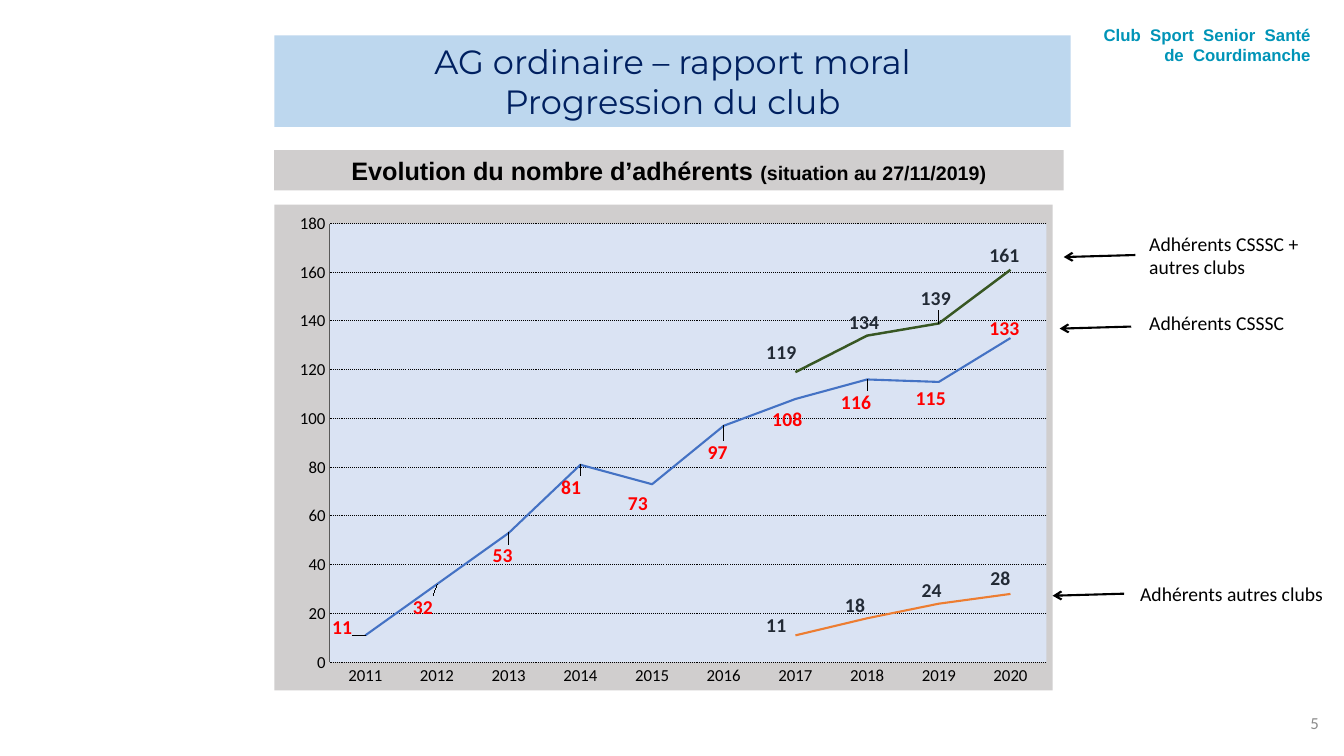
from dataclasses import dataclass

from lxml.etree import SubElement
from pptx import Presentation
from pptx.chart.data import CategoryChartData as ChartData
from pptx.dml.color import RGBColor as Rgb
from pptx.enum.chart import XL_CHART_TYPE as Kind, XL_LABEL_POSITION as Spot
from pptx.enum.chart import XL_TICK_MARK as Tick
from pptx.enum.dml import MSO_LINE as Dash
from pptx.enum.shapes import MSO_CONNECTOR as Link, MSO_SHAPE as Form
from pptx.enum.text import MSO_ANCHOR as Anchor, MSO_AUTO_SIZE as Fit
from pptx.enum.text import PP_ALIGN as Align
from pptx.oxml import parse_xml
from pptx.oxml.ns import nsdecls, qn
from pptx.util import Inches, Pt


@dataclass(frozen=True)
class Theme:
    body: str = "Calibri"
    head: str = "Montserrat"
    sans: str = "Arial"
    black: str = "000000"
    navy: str = "002060"
    teal: str = "0094B7"
    sky: str = "BDD7EE"
    pale: str = "DAE3F3"
    grey: str = "D0CECE"
    dim: str = "8C8C8C"
    axis: str = "595959"
    red: str = "FF0000"
    slate: str = "222A35"
    blue: str = "4472C4"
    orange: str = "ED7D31"
    green: str = "385723"
    title: int = 24
    sub: int = 18
    note: int = 14
    small: int = 12


@dataclass(frozen=True)
class Box:
    x: float
    y: float
    w: float
    h: float

    def place(self) -> tuple:
        return tuple(Inches(v) for v in (self.x, self.y, self.w, self.h))


@dataclass(frozen=True)
class Callout:
    text: str
    box: Box
    tip: tuple  # arrowhead position


@dataclass(frozen=True)
class Trend:
    name: str
    vals: tuple
    line: str
    width: float
    ink: str
    shifts: tuple  # label offsets from the points, in inches


T = Theme()
YEARS = [str(y) for y in range(2011, 2021)]
CHART = Box(2.72, 2.03, 7.72, 4.82)
PLOT = {"x": 0.071, "y": 0.039, "w": 0.921, "h": 0.903}

CALLOUTS = (
    Callout("Adhérents CSSSC + autres clubs", Box(11.3, 2.25, 1.94, 0.57), (10.55, 2.55)),
    Callout("Adhérents CSSSC", Box(11.3, 3.04, 1.94, 0.34), (10.51, 3.26)),
    Callout("Adhérents autres clubs", Box(11.21, 5.72, 2.13, 0.34), (10.44, 5.91)),
)
TRENDS = (
    Trend("Adhérents CSSSC", (11, 32, 53, 81, 73, 97, 108, 116, 115, 133),
          T.blue, 1.5, T.red,
          ((-.23, -.08), (-.14, .23), (-.06, .23), (-.09, .23), (-.14, .19),
           (-.06, .27), (-.08, .21), (-.11, .23), (-.08, .17), (-.06, -.09))),
    Trend("Adhérents autres clubs", (11, 18, 24, 28), T.orange, 1.5, T.slate,
          ((-.19, -.10), (-.12, -.13), (-.07, -.13), (-.10, -.15))),
    Trend("Adhérents CSSSC + autres clubs", (119, 134, 139, 161), T.green, 1.75, T.slate,
          ((-.14, -.19), (-.03, -.13), (-.03, -.25), (-.06, -.14))),
)


def style(font, size: float, name: str, color: str, bold: bool = False) -> None:
    font.size, font.name, font.bold = Pt(size), name, bold
    font.color.rgb = Rgb.from_string(color)


def paint(shape, color: str) -> None:
    shape.fill.solid()
    shape.fill.fore_color.rgb = Rgb.from_string(color)


def write(shape, lines: tuple, size: float, name: str, color: str,
          align=Align.LEFT, bold: bool = False, anchor=Anchor.TOP) -> None:
    frame = shape.text_frame
    frame.word_wrap, frame.auto_size = True, Fit.NONE
    frame.vertical_anchor = anchor
    frame.text = "\n".join(lines)
    for para in frame.paragraphs:
        para.alignment = align
        style(para.font, size, name, color, bold)


def add_note(slide, item: Callout) -> None:
    box = item.box
    write(slide.shapes.add_textbox(*box.place()), (item.text,), T.note, T.body, T.black)
    x, y = item.tip
    arrow = slide.shapes.add_connector(
        Link.STRAIGHT, Inches(x + 0.71), Inches(y - 0.02), Inches(x), Inches(y))
    arrow.line.width = Pt(1.5)
    arrow.line.color.rgb = Rgb.from_string(T.black)
    SubElement(arrow.line._get_or_add_ln(), qn("a:tailEnd"), type="arrow")
    SubElement(arrow._element.spPr, qn("a:effectLst"))


def layout(vals: dict, inner: bool = False):
    tags = '<c:layoutTarget val="inner"/>' if inner else ""
    if inner:
        tags += '<c:xMode val="edge"/><c:yMode val="edge"/>'
    tags += "".join(f'<c:{k} val="{v}"/>' for k, v in vals.items())
    return parse_xml(f'<c:layout {nsdecls("c")}><c:manualLayout>{tags}'
                     '</c:manualLayout></c:layout>')


def area(color: str):
    return parse_xml(f'<c:spPr {nsdecls("c", "a")}><a:solidFill><a:srgbClr val="{color}"/>'
                     '</a:solidFill><a:ln><a:noFill/></a:ln></c:spPr>')


def draw_trend(series, trend: Trend) -> None:
    series.smooth = False
    series.format.line.width = Pt(trend.width)
    series.format.line.color.rgb = Rgb.from_string(trend.line)
    start = len(YEARS) - len(trend.vals)
    for i, (dx, dy) in enumerate(trend.shifts, start):
        label = series.points[i].data_label
        style(label.font, T.note, T.body, trend.ink, True)
        label.position = Spot.CENTER
    for item, (dx, dy) in zip(series._element.iter(qn("c:dLbl")), trend.shifts):
        shift = {"x": round(dx / CHART.w, 4), "y": round(dy / CHART.h, 4)}
        item.insert(1, layout(shift))


def add_graph(slide) -> None:
    data = ChartData()
    data.categories = YEARS
    for trend in TRENDS:
        gap = [None] * (len(YEARS) - len(trend.vals))
        data.add_series(trend.name, gap + list(trend.vals))
    chart = slide.shapes.add_chart(Kind.LINE, *CHART.place(), data).chart
    chart.has_legend = chart.has_title = False
    style(chart.font, 10, T.body, T.black)
    for series, trend in zip(chart.plots[0].series, TRENDS):
        draw_trend(series, trend)

    # Axes and grid
    years, count = chart.category_axis, chart.value_axis
    for axis in (years, count):
        axis.major_tick_mark = axis.minor_tick_mark = Tick.NONE
        style(axis.tick_labels.font, T.small, T.body, T.black)
    years.format.line.fill.background()
    count.minimum_scale, count.maximum_scale, count.major_unit = 0, 180, 20
    count.format.line.color.rgb = Rgb.from_string(T.axis)
    count.format.line.width = Pt(0.75)
    grid = count.major_gridlines.format.line
    grid.color.rgb = Rgb.from_string(T.black)
    grid.width, grid.dash_style = Pt(0.75), Dash.ROUND_DOT

    # Plot position and backgrounds
    root = chart._chartSpace.find(qn("c:chart"))
    plot = root.find(qn("c:plotArea"))
    for old in plot.findall(qn("c:layout")):
        plot.remove(old)
    plot.insert(0, layout(PLOT, True))
    plot.append(area(T.pale))
    root.addnext(area(T.grey))


def main() -> None:
    deck = Presentation()
    deck.slide_width, deck.slide_height = Inches(13.33), Inches(7.5)
    slide = deck.slides.add_slide(deck.slide_layouts[5])
    shapes = slide.shapes

    # Title and club name
    title = shapes.title
    title.left, title.top, title.width, title.height = Box(2.72, 0.35, 7.9, 0.91).place()
    paint(title, T.sky)
    write(title, ("AG ordinaire – rapport moral", "Progression du club"),
          T.title, T.head, T.navy, Align.CENTER, anchor=Anchor.MIDDLE)
    club = shapes.add_textbox(*Box(10.75, 0.14, 2.44, 0.61).place())
    write(club, ("Club  Sport  Senior  Santé", "de  Courdimanche"),
          T.small, T.sans, T.teal, Align.RIGHT, True, Anchor.MIDDLE)
    club.text_frame.paragraphs[0]._p.get_or_add_pPr().set("marR", str(Inches(0.09)))

    # Chart heading
    band = shapes.add_shape(Form.RECTANGLE, *Box(2.72, 1.49, 7.83, 0.4).place())
    band.shadow.inherit = False
    paint(band, T.grey)
    band.line.fill.background()
    write(band, ("Evolution du nombre d’adhérents ",), T.sub, T.sans, T.black,
          Align.CENTER, True)
    date = band.text_frame.paragraphs[0].add_run()
    date.text, date.font.size = "(situation au 27/11/2019)", Pt(T.note)

    # Chart, callouts and page number
    add_graph(slide)
    for item in CALLOUTS:
        add_note(slide, item)
    page = shapes.add_textbox(*Box(12.45, 6.97, 0.73, 0.4).place())
    write(page, ("5",), T.small, T.body, T.dim, Align.RIGHT, anchor=Anchor.MIDDLE)
    deck.save("out.pptx")


if __name__ == "__main__":
    main()
